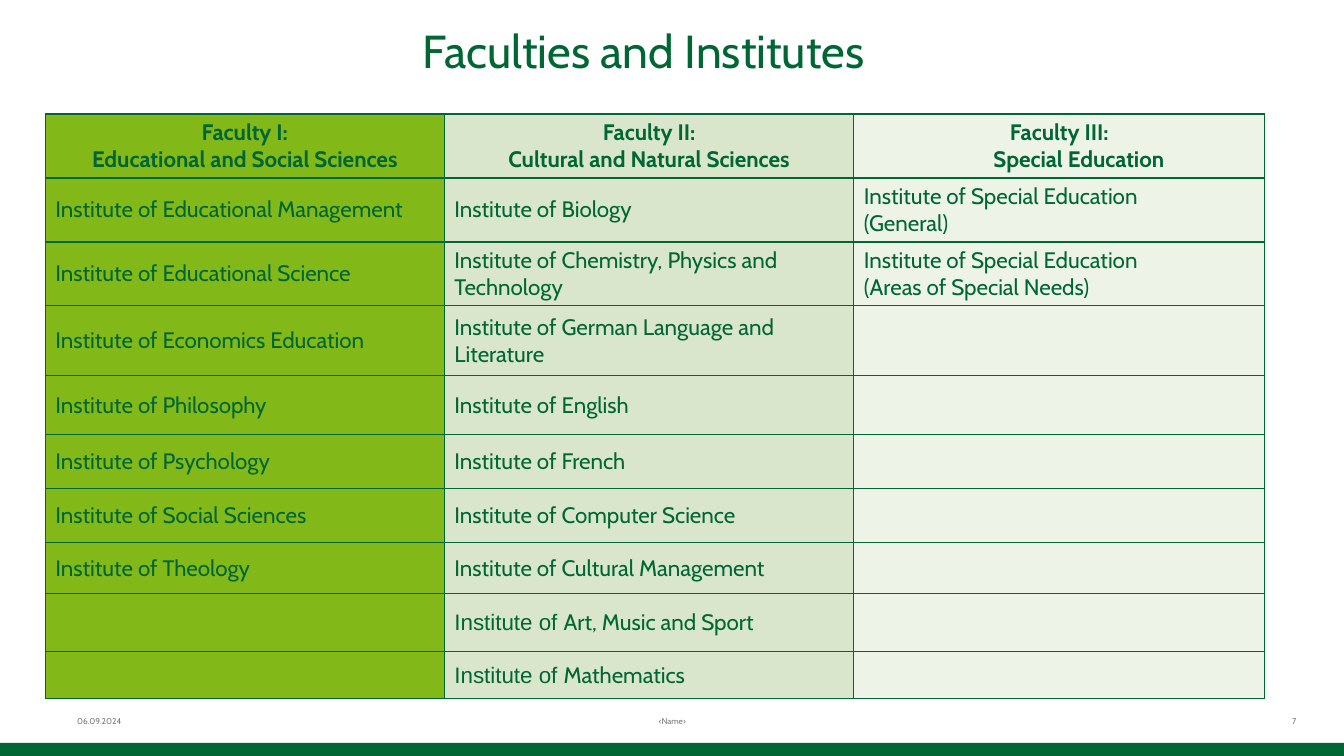
from dataclasses import dataclass

from lxml import etree
from pptx import Presentation
from pptx.dml.color import RGBColor
from pptx.enum.shapes import MSO_SHAPE
from pptx.enum.text import MSO_ANCHOR, PP_ALIGN
from pptx.oxml.ns import qn
from pptx.slide import Slide
from pptx.table import Table, _Cell
from pptx.util import Pt

LEFT, CENTER, RIGHT = PP_ALIGN.LEFT, PP_ALIGN.CENTER, PP_ALIGN.RIGHT
TOP, MIDDLE = MSO_ANCHOR.TOP, MSO_ANCHOR.MIDDLE
RECTANGLE = MSO_SHAPE.RECTANGLE

GREEN = RGBColor(0x00, 0x66, 0x33)
GRAY = RGBColor(0x79, 0x79, 0x79)
LIME = RGBColor(0x83, 0xB8, 0x19)
SAGE = RGBColor(0xD9, 0xE6, 0xCC)
MIST = RGBColor(0xED, 0xF3, 0xE7)

FONT = "Cabin"
FALLBACK_FONT = "Arial"
PREFIX = "Institute of "
HANGING = 28.08
SLIDE_WIDTH, SLIDE_HEIGHT = 960, 540
BAR_HEIGHT = 9.4
TABLE_LEFT, TABLE_TOP = 32.4, 81.4
ROW_HEIGHTS = (45.7, 45.7, 45.7, 50, 42.1, 38.6, 38.6, 36.4, 41.4, 33.6)


@dataclass(frozen=True)
class Faculty:
    """One table column; a newline starts a paragraph, a \\v a line."""
    heading: str
    institutes: tuple[str, ...]
    width: float
    fill: RGBColor
    fallback_rows: tuple[int, ...] = ()


@dataclass(frozen=True)
class FooterItem:
    text: str
    left: float
    width: float
    align: PP_ALIGN
    right_inset: float = 7.2


FACULTIES = (
    Faculty("Faculty I:\nEducational and Social Sciences",
            ("Educational Management", "Educational Science",
             "Economics Education", "Philosophy", "Psychology",
             "Social Sciences", "Theology"),
            285, LIME),
    Faculty("Faculty II:\nCultural and Natural Sciences",
            ("Biology", "Chemistry, Physics and\nTechnology",
             "German Language and\nLiterature", "English", "French",
             "Computer Science", "Cultural Management",
             "Art, Music and Sport", "Mathematics"),
            292.5, SAGE, fallback_rows=(8, 9)),
    Faculty("Faculty III:\vSpecial Education",
            ("Special Education\n(General)",
             "Special Education\n(Areas of Special Needs)"),
            293.5, MIST),
)

FOOTER = (
    FooterItem("‹Name›", 328.3, 303.8, CENTER),
    FooterItem("06.09.2024", 48, 224, LEFT),
    FooterItem("7", 702, 224, RIGHT, right_inset=0),
)


def add_bar(slide: Slide) -> None:
    sp = slide.shapes.add_shape(RECTANGLE, 0, Pt(SLIDE_HEIGHT - BAR_HEIGHT),
                                Pt(SLIDE_WIDTH), Pt(BAR_HEIGHT))
    sp.shadow.inherit = False
    sp.fill.solid()
    sp.fill.fore_color.rgb = GREEN
    sp.line.fill.background()


def format_title(slide: Slide) -> None:
    sp = slide.shapes.title
    sp.left, sp.top, sp.width, sp.height = Pt(110.2), Pt(15.8), Pt(699), Pt(90)
    tf = sp.text_frame
    tf.text = "Faculties and Institutes"
    tf.vertical_anchor = TOP
    tf.margin_top = 0
    p = tf.paragraphs[0]
    p.alignment = CENTER
    p.font.name, p.font.size = FONT, Pt(33)
    p.font.color.rgb = GREEN


def add_footer_item(slide: Slide, item: FooterItem) -> None:
    sp = slide.shapes.add_textbox(Pt(item.left), Pt(500.4), Pt(item.width), Pt(28.8))
    tf = sp.text_frame
    tf.word_wrap = True
    tf.vertical_anchor = MIDDLE
    tf.margin_right = Pt(item.right_inset)
    tf.text = item.text
    p = tf.paragraphs[0]
    p.alignment = item.align
    p.font.name, p.font.size = FONT, Pt(6)
    p.font.color.rgb = GRAY


def style_cell(cell: _Cell, fill: RGBColor) -> None:
    """Draw all four borders, then fill the cell."""
    tc_pr = cell._tc.get_or_add_tcPr()
    for side in ("a:lnL", "a:lnR", "a:lnT", "a:lnB"):
        ln = etree.SubElement(tc_pr, qn(side), w=str(Pt(1)))
        solid = etree.SubElement(ln, qn("a:solidFill"))
        etree.SubElement(solid, qn("a:srgbClr"), val=str(GREEN))
    cell.fill.solid()
    cell.fill.fore_color.rgb = fill


def write_cell(cell: _Cell, text: str, heading: bool, prefix: str = "") -> None:
    """Write the text, after a prefix in the fallback font if one is given."""
    cell.vertical_anchor = TOP if heading else MIDDLE
    tf = cell.text_frame
    tf.text = text
    for p in tf.paragraphs:
        p_pr = p._p.get_or_add_pPr()
        p_pr.set("marL", str(Pt(HANGING)))
        p_pr.set("indent", str(-Pt(HANGING)))
        p.alignment = CENTER if heading else LEFT
        p.font.name, p.font.size, p.font.bold = FONT, Pt(16), heading
        p.font.color.rgb = GREEN
    if prefix:
        p = tf.paragraphs[0]
        p.runs[0].text = prefix
        p.runs[0].font.name = FALLBACK_FONT
        p.add_run().text = text


def fill_column(table: Table, index: int, faculty: Faculty) -> None:
    table.columns[index].width = Pt(faculty.width)
    for row in range(len(ROW_HEIGHTS)):
        cell = table.cell(row, index)
        style_cell(cell, faculty.fill)
        if row == 0:
            write_cell(cell, faculty.heading, heading=True)
        elif row <= len(faculty.institutes):
            name = faculty.institutes[row - 1]
            if row in faculty.fallback_rows:
                write_cell(cell, name, heading=False, prefix=PREFIX)
            else:
                write_cell(cell, PREFIX + name, heading=False)


def add_faculty_table(slide: Slide) -> None:
    frame = slide.shapes.add_table(
        len(ROW_HEIGHTS), len(FACULTIES), Pt(TABLE_LEFT), Pt(TABLE_TOP),
        Pt(sum(f.width for f in FACULTIES)), Pt(sum(ROW_HEIGHTS)))
    table = frame.table
    table.first_row = table.horz_banding = False
    for row, height in zip(table.rows, ROW_HEIGHTS):
        row.height = Pt(height)
    for index, faculty in enumerate(FACULTIES):
        fill_column(table, index, faculty)


def main() -> None:
    prs = Presentation()
    prs.slide_width, prs.slide_height = Pt(SLIDE_WIDTH), Pt(SLIDE_HEIGHT)
    slide = prs.slides.add_slide(prs.slide_layouts[5])
    add_bar(slide)
    format_title(slide)
    for item in FOOTER:
        add_footer_item(slide, item)
    add_faculty_table(slide)
    prs.save("out.pptx")


if __name__ == "__main__":
    main()
